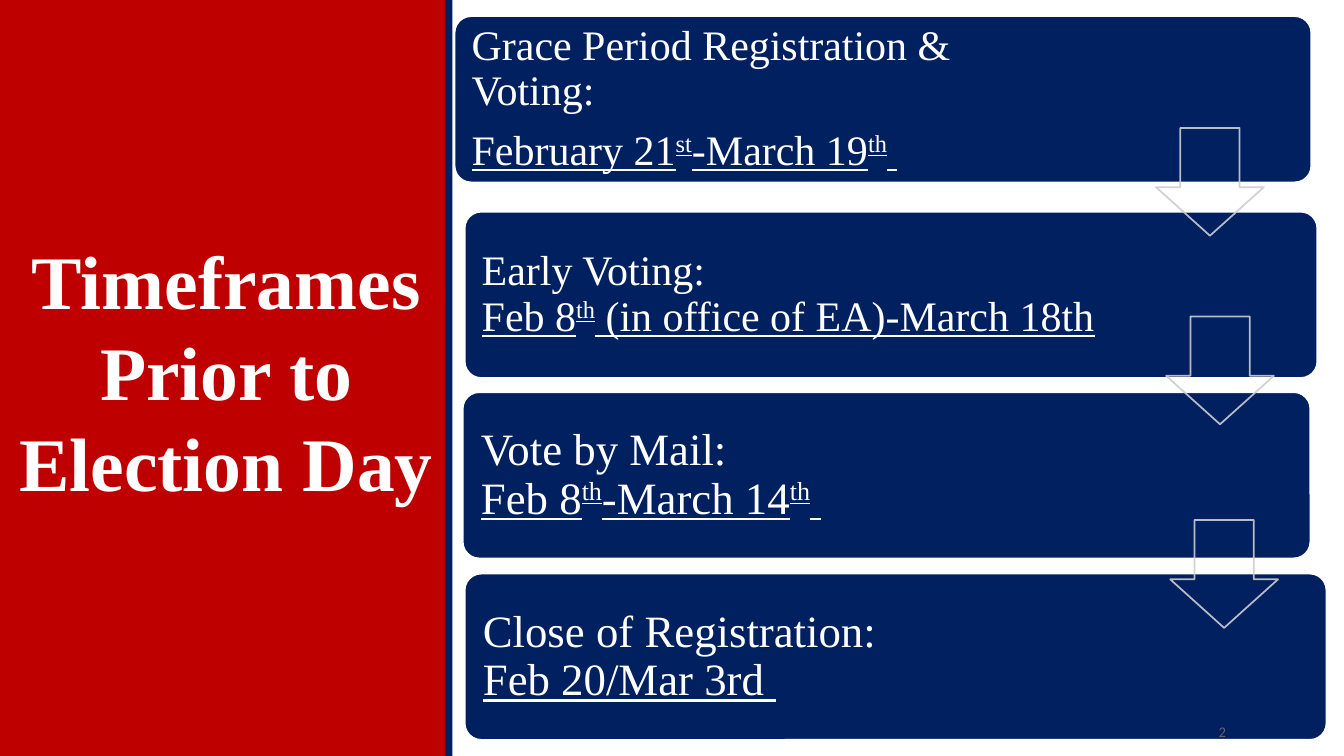
from dataclasses import dataclass

from lxml.etree import SubElement
from pptx import Presentation
from pptx.dml.color import RGBColor
from pptx.enum.shapes import MSO_SHAPE
from pptx.enum.text import MSO_ANCHOR, PP_ALIGN
from pptx.oxml.ns import qn
from pptx.shapes.autoshape import Shape
from pptx.slide import Slide
from pptx.text.text import TextFrame, _Paragraph
from pptx.util import Pt

COLORS = {
    "red": "BF0000",
    "navy": "002060",
    "white": "FFFFFF",
    "arrow": "CCCDD2",
    "number": "696464",
}
SERIF = "Times New Roman"
CARD_HEIGHT = 118.8
CARD_PADDING = 3.6
ARROW_SIZE = 77


@dataclass(frozen=True)
class Box:
    left: float
    top: float
    width: float
    height: float

    def lengths(self) -> tuple[Pt, Pt, Pt, Pt]:
        return Pt(self.left), Pt(self.top), Pt(self.width), Pt(self.height)


@dataclass(frozen=True)
class Card:
    left: float
    top: float
    width: float
    text_width: float
    size: float
    inset: float
    heading: str
    dates: tuple[str, ...]
    separate_paragraphs: bool = False


@dataclass(frozen=True)
class Arrow:
    left: float
    top: float


CARDS = [
    Card(324.7, 11.5, 612, 447.1, 30, 8.6, "Grace Period Registration & Voting:",
         ("February 21", "st", "-March 19", "th", " "), True),
    Card(331.9, 151.2, 609.1, 459.4, 30, 8.6, "Early Voting:",
         ("Feb 8", "th", " (in office of EA)-March 18th")),
    Card(330.5, 280.1, 605.5, 456.5, 32, 9.4, "Vote by Mail:",
         ("Feb 8", "th", "-March 14", "th", " ")),
    Card(331.9, 409.7, 615.6, 463.7, 32, 9.4, "Close of Registration:",
         ("Feb 20/Mar 3rd ",)),
]
ARROWS = [Arrow(825.8, 91.4), Arrow(833, 226.1), Arrow(835.9, 371.5)]


def color(name: str) -> RGBColor:
    return RGBColor.from_string(COLORS[name])


def add_shape(slide: Slide, kind: MSO_SHAPE, box: Box, fill: str | None,
              line: str | None = None) -> Shape:
    shape = slide.shapes.add_shape(kind, *box.lengths())
    shape.shadow.inherit = False
    if fill:
        shape.fill.solid()
        shape.fill.fore_color.rgb = color(fill)
    else:
        shape.fill.background()
    if line:
        shape.line.color.rgb = color(line)
        shape.line.width = Pt(1.25)
    else:
        shape.line.fill.background()
    return shape


def add_text_frame(slide: Slide, box: Box, inset: float | None = None) -> TextFrame:
    frame = slide.shapes.add_textbox(*box.lengths()).text_frame
    frame.word_wrap = True
    frame.vertical_anchor = MSO_ANCHOR.MIDDLE
    if inset is not None:
        for side in ("left", "top", "right", "bottom"):
            setattr(frame, f"margin_{side}", Pt(inset))
    return frame


def add_run(paragraph: _Paragraph, text: str, text_color: str, formats: dict,
            superscript: bool = False) -> None:
    run = paragraph.add_run()
    run.text = text
    for name, value in formats.items():
        setattr(run.font, name, value)
    run.font.color.rgb = color(text_color)
    if superscript:
        run.font._element.set("baseline", "30000")


def format_card_paragraph(paragraph: _Paragraph, size: float) -> None:
    for name, value in {"line_spacing": 0.9, "space_after": Pt(size * 0.35)}.items():
        setattr(paragraph, name, value)


def add_card(slide: Slide, card: Card) -> None:
    outline = Box(card.left, card.top, card.width, CARD_HEIGHT)
    shape = add_shape(slide, MSO_SHAPE.ROUNDED_RECTANGLE, outline, "navy", "white")
    shape.adjustments[0] = 0.1

    text_box = Box(card.left + CARD_PADDING, card.top + CARD_PADDING,
                   card.text_width, CARD_HEIGHT - 2 * CARD_PADDING)
    frame = add_text_frame(slide, text_box, card.inset)
    formats = {"name": SERIF, "size": Pt(card.size)}
    paragraph = frame.paragraphs[0]
    format_card_paragraph(paragraph, card.size)
    add_run(paragraph, card.heading, "white", formats)
    if card.separate_paragraphs:
        paragraph = frame.add_paragraph()
        format_card_paragraph(paragraph, card.size)
    else:
        paragraph.add_line_break()
    for index, part in enumerate(card.dates):
        add_run(paragraph, part, "white", formats | {"underline": True}, index % 2 == 1)


def add_arrow(slide: Slide, arrow: Arrow) -> None:
    box = Box(arrow.left, arrow.top, ARROW_SIZE, ARROW_SIZE)
    shape = add_shape(slide, MSO_SHAPE.DOWN_ARROW, box, None, "arrow")
    shape.adjustments[0] = 0.55
    shape.adjustments[1] = 0.45
    line_color = shape.line._ln.find(f".//{qn('a:srgbClr')}")
    SubElement(line_color, qn("a:alpha"), val="90000")


def add_label(slide: Slide, box: Box, text: str, text_color: str,
              alignment: PP_ALIGN, formats: dict) -> None:
    paragraph = add_text_frame(slide, box).paragraphs[0]
    paragraph.alignment = alignment
    add_run(paragraph, text, text_color, formats)


def main() -> None:
    presentation = Presentation()
    presentation.slide_width = Pt(960)
    presentation.slide_height = Pt(540)
    slide = presentation.slides.add_slide(presentation.slide_layouts[6])

    add_shape(slide, MSO_SHAPE.RECTANGLE, Box(0, 0, 319, 540), "red")
    add_shape(slide, MSO_SHAPE.RECTANGLE, Box(318.2, 0, 5, 540), "navy")
    add_label(slide, Box(0, 162.7, 323.3, 203.8), "Timeframes Prior to Election Day",
              "white", PP_ALIGN.CENTER, {"name": SERIF, "size": Pt(54), "bold": True})
    for card in CARDS:
        add_card(slide, card)
    for arrow in ARROWS:
        add_arrow(slide, arrow)
    add_label(slide, Box(779.8, 508.3, 103, 28.8), "2", "number", PP_ALIGN.RIGHT,
              {"name": "Calibri", "size": Pt(10.5)})

    presentation.save("out.pptx")


if __name__ == "__main__":
    main()
